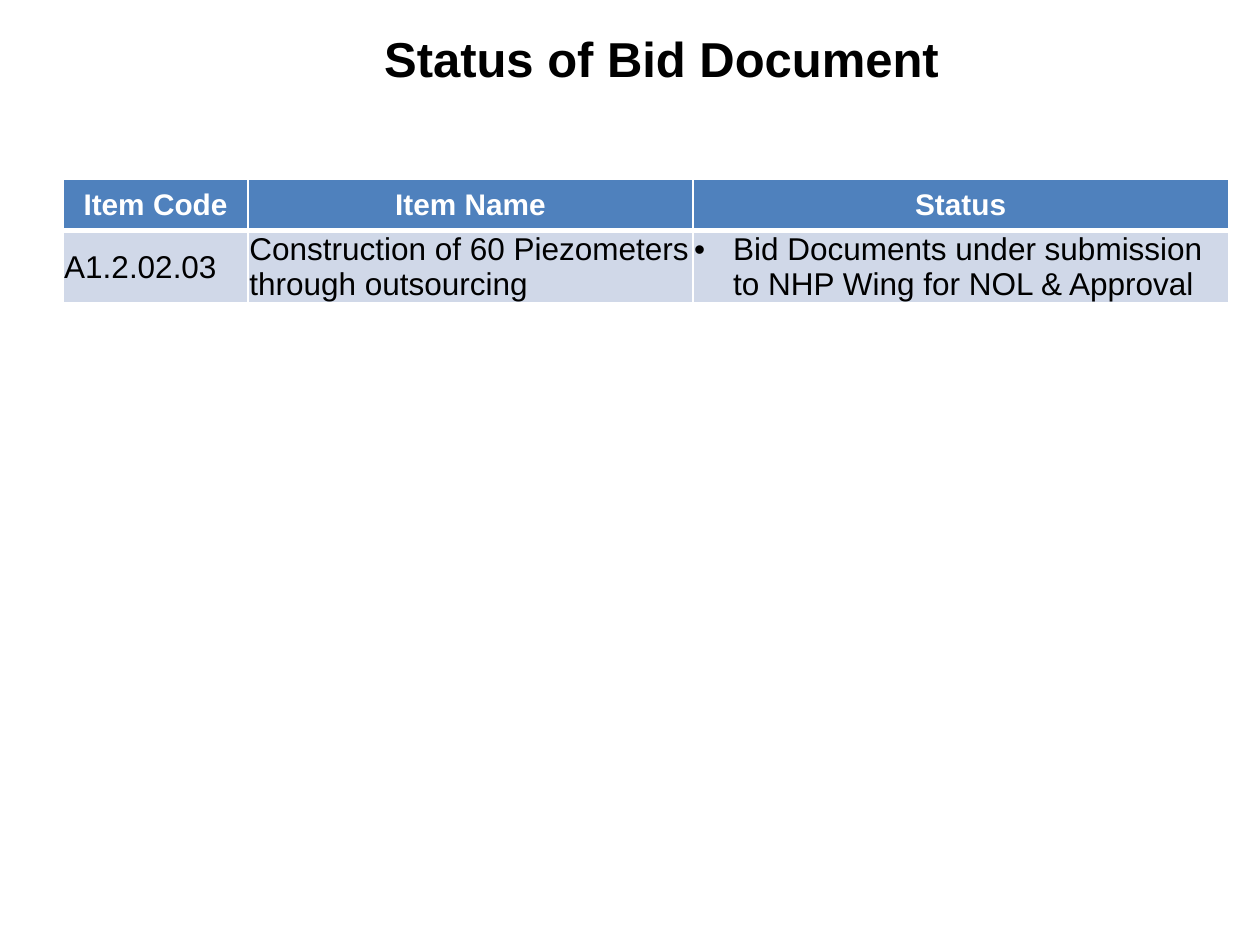
from lxml.etree import SubElement
from pptx import Presentation
from pptx.dml.color import RGBColor
from pptx.enum.text import MSO_ANCHOR, PP_ALIGN
from pptx.oxml.ns import qn
from pptx.util import Inches, Pt

BLACK = RGBColor(0x00, 0x00, 0x00)
WHITE = RGBColor(0xFF, 0xFF, 0xFF)
HEADER_BLUE = RGBColor(0x4F, 0x81, 0xBD)
ROW_BLUE = RGBColor(0xD0, 0xD8, 0xE8)


def write_text(frame, text, size, color, bold=False, align=PP_ALIGN.LEFT, bullet=False):
    para = frame.paragraphs[0]
    para.alignment = align
    if bullet:
        properties = para._p.get_or_add_pPr()
        properties.set("marL", str(Inches(0.31)))
        properties.set("indent", str(-Inches(0.31)))
        SubElement(properties, qn("a:buFont"), typeface="Arial")
        SubElement(properties, qn("a:buChar"), char="•")
    span = para.add_run()
    span.text = text
    span.font.name = "Arial"
    span.font.size = Pt(size)
    span.font.bold = bold
    span.font.color.rgb = color


def add_border(cell, side, width):
    line = SubElement(cell._tc.get_or_add_tcPr(), qn(f"a:ln{side}"), w=str(Pt(width)))
    fill = SubElement(line, qn("a:solidFill"))
    SubElement(fill, qn("a:srgbClr"), val=str(WHITE))


deck = Presentation()
deck.slide_width = Inches(10)
deck.slide_height = Inches(7.5)
page = deck.slides.add_slide(deck.slide_layouts[5])

title = page.shapes.title
title.left, title.top = Inches(1), Inches(0)
title.width, title.height = Inches(8.5), Inches(0.92)
title.text_frame.vertical_anchor = MSO_ANCHOR.MIDDLE
write_text(title.text_frame, "Status of Bid Document", 28, BLACK, bold=True, align=PP_ALIGN.CENTER)

rows = [
    ["Item Code", "Item Name", "Status"],
    [
        "A1.2.02.03",
        "Construction of 60 Piezometers through outsourcing",
        "Bid Documents under submission to NHP Wing for NOL & Approval",
    ],
]
column_widths = [1.47, 3.53, 4.25]
row_height = 0.41

table = page.shapes.add_table(
    len(rows), len(column_widths), Inches(0.5), Inches(1.42),
    Inches(sum(column_widths)), Inches(row_height * len(rows)),
).table
for column, width in zip(table.columns, column_widths):
    column.width = Inches(width)

for row_index, texts in enumerate(rows):
    is_header = row_index == 0
    table.rows[row_index].height = Inches(row_height)
    for column_index, text in enumerate(texts):
        cell = table.cell(row_index, column_index)
        cell.margin_left = cell.margin_right = cell.margin_top = Inches(0.01)
        cell.margin_bottom = Inches(0)
        cell.vertical_anchor = MSO_ANCHOR.MIDDLE
        border_widths = {"L": 1, "R": 1, "T": 1 if is_header else 3, "B": 3 if is_header else 1}
        for side, width in border_widths.items():
            add_border(cell, side, width)
        cell.fill.solid()
        cell.fill.fore_color.rgb = HEADER_BLUE if is_header else ROW_BLUE
        if is_header:
            write_text(cell.text_frame, text, 17, WHITE, bold=True, align=PP_ALIGN.CENTER)
        else:
            write_text(cell.text_frame, text, 18, BLACK, bullet=column_index == 2)

deck.save("out.pptx")
